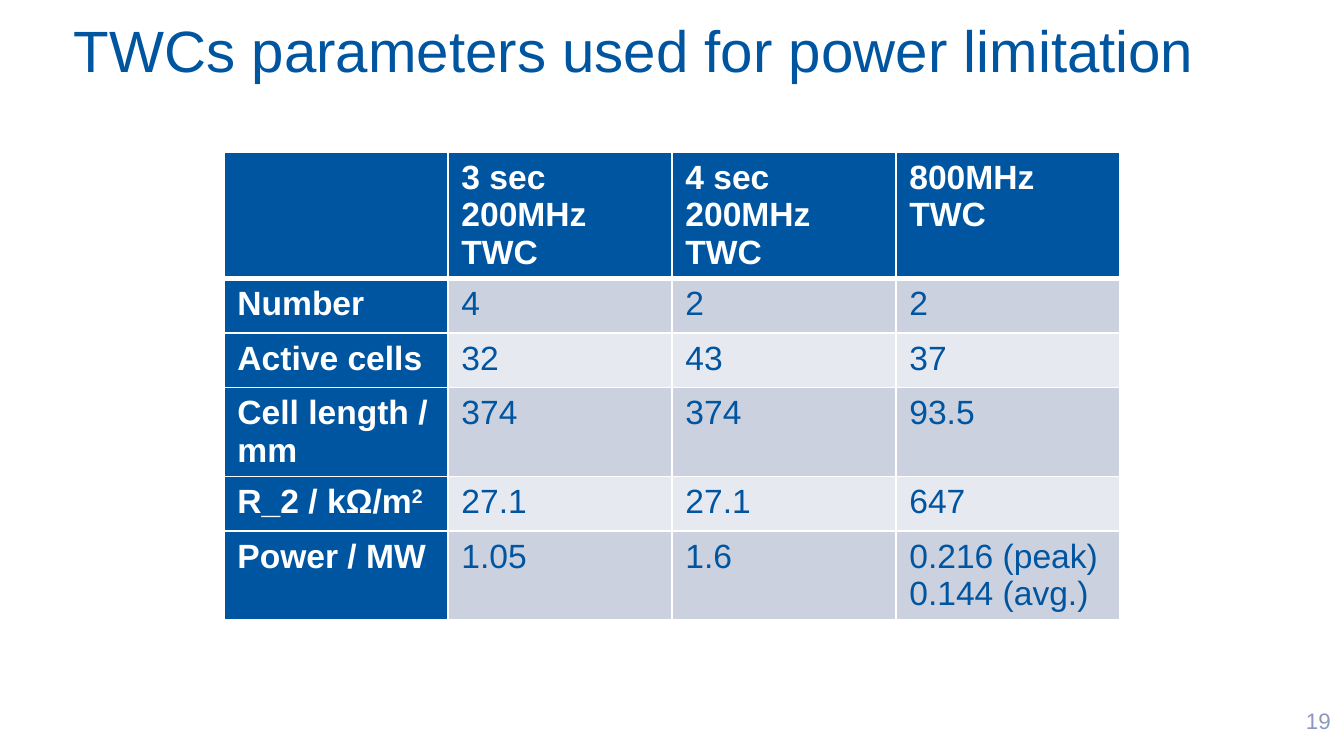
from lxml import etree
from pptx import Presentation
from pptx.dml.color import RGBColor
from pptx.enum import text
from pptx.oxml import ns
from pptx.util import Pt

BLUE = RGBColor(0x00, 0x55, 0xA0)
WHITE = RGBColor(0xFF, 0xFF, 0xFF)
DARK = RGBColor(0xCC, 0xD1, 0xDF)
LIGHT = RGBColor(0xE7, 0xE9, 0xF0)
MUTED = RGBColor(0x8C, 0x99, 0xBE)

ROWS = [
    ["", "3 sec 200MHz TWC", "4 sec 200MHz TWC", "800MHz TWC"],
    ["Number", "4", "2", "2"],
    ["Active cells", "32", "43", "37"],
    ["Cell length / mm", "374", "374", "93.5"],
    ["R_2 / kΩ/m^2", "27.1", "27.1", "647"],
    ["Power / MW", "1.05", "1.6", "0.216 (peak)\n0.144 (avg.)"],
]
HEIGHTS = [67.5, 29.2, 29.2, 47.6, 29.2, 47.2]
WIDTH = 120


class Deck:
    face = "Arial"

    def __init__(self, wide, high):
        self.prs = Presentation()
        self.prs.slide_width, self.prs.slide_height = Pt(wide), Pt(high)
        self.slide = self.prs.slides.add_slide(self.prs.slide_layouts[5])

    def style(self, par, size, color, bold=False):
        font = par.font
        font.name, font.size, font.bold = self.face, Pt(size), bold
        font.color.rgb = color

    def title(self, words, left, top, wide, high):
        box = self.slide.shapes.title
        box.left, box.top, box.width, box.height = map(Pt, (left, top, wide, high))
        frame = box.text_frame
        frame.text = words
        frame.auto_size = text.MSO_AUTO_SIZE.NONE
        frame.vertical_anchor = text.MSO_ANCHOR.MIDDLE
        frame.margin_left = frame.margin_right = Pt(3.6)
        frame.margin_top = frame.margin_bottom = Pt(3.6)
        par = frame.paragraphs[0]
        par.alignment = text.PP_ALIGN.LEFT
        self.style(par, 31.2, BLUE)

    def label(self, words, left, top, wide, high):
        box = self.slide.shapes.add_textbox(*map(Pt, (left, top, wide, high)))
        frame = box.text_frame
        frame.word_wrap = True
        frame.vertical_anchor = text.MSO_ANCHOR.MIDDLE
        par = frame.paragraphs[0]
        par.text = words
        par.alignment = text.PP_ALIGN.RIGHT
        self.style(par, 12, MUTED)

    def edge(self, cell, side, wide):
        props = cell._tc.get_or_add_tcPr()
        line = etree.SubElement(props, ns.qn(f"a:ln{side}"), w=str(Pt(wide)))
        fill = etree.SubElement(line, ns.qn("a:solidFill"))
        etree.SubElement(fill, ns.qn("a:srgbClr"), val=str(WHITE))

    def cell(self, cell, words, row, col):
        head = row == 0 or col == 0
        for side in "LRTB":
            thick = (row, side) in ((0, "B"), (1, "T"))
            self.edge(cell, side, 3 if thick else 1)
        cell.fill.solid()
        cell.fill.fore_color.rgb = BLUE if head else DARK if row % 2 else LIGHT
        frame = cell.text_frame
        base, _, power = words.partition("^")
        frame.text = base
        if power:
            run = frame.paragraphs[0].add_run()
            run.text = power
            run.font._element.set("baseline", "30000")
        for par in frame.paragraphs:
            self.style(par, 18, WHITE if head else BLUE, head)

    def table(self, rows, left, top, wide, highs):
        count = len(rows[0])
        size = map(Pt, (left, top, wide * count, sum(highs)))
        grid = self.slide.shapes.add_table(len(rows), count, *size).table
        for col in grid.columns:
            col.width = Pt(wide)
        for r, (words, high) in enumerate(zip(rows, highs)):
            grid.rows[r].height = Pt(high)
            for c, word in enumerate(words):
                self.cell(grid.cell(r, c), word, r, c)


def main():
    deck = Deck(720, 405)
    deck.title("TWCs parameters used for power limitation", 36, 4.3, 648, 44)
    deck.table(ROWS, 120, 81.5, WIDTH, HEIGHTS)
    deck.label("19", 680.4, 375.4, 39.6, 21.6)
    deck.prs.save("out.pptx")


if __name__ == "__main__":
    main()
